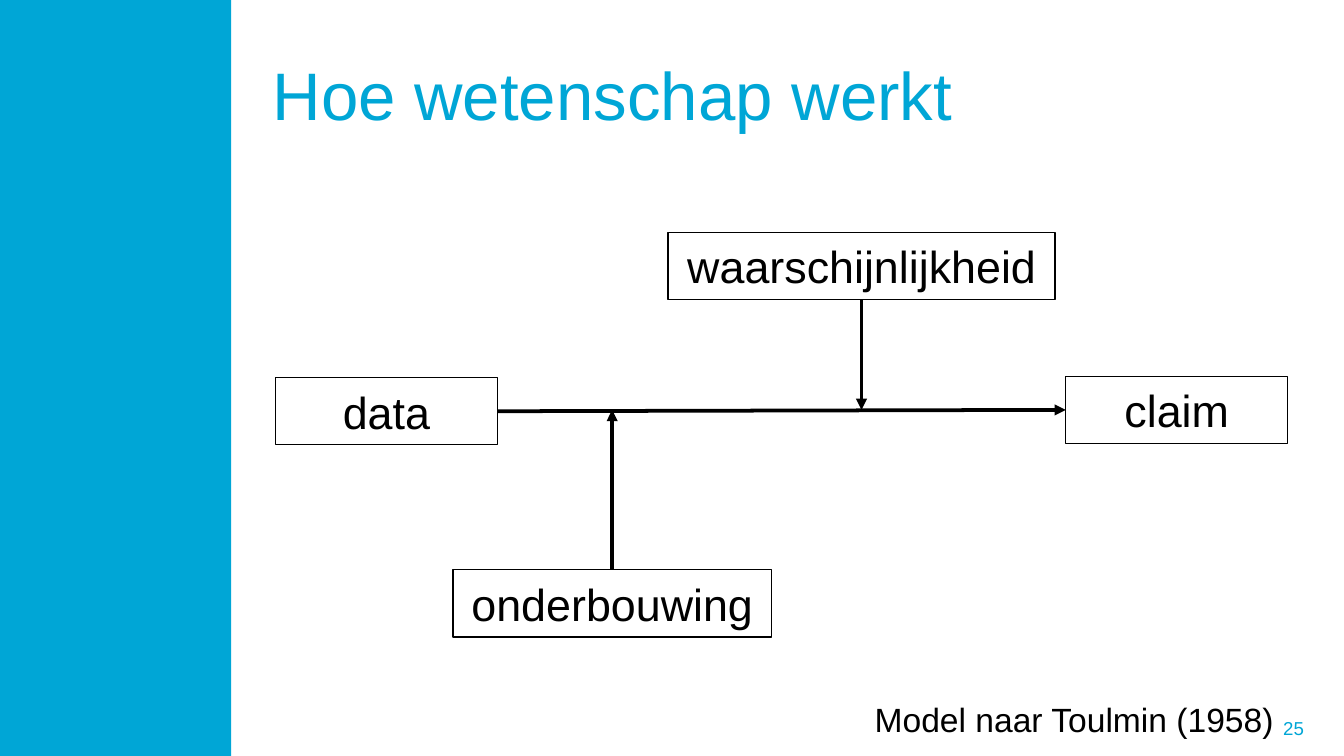
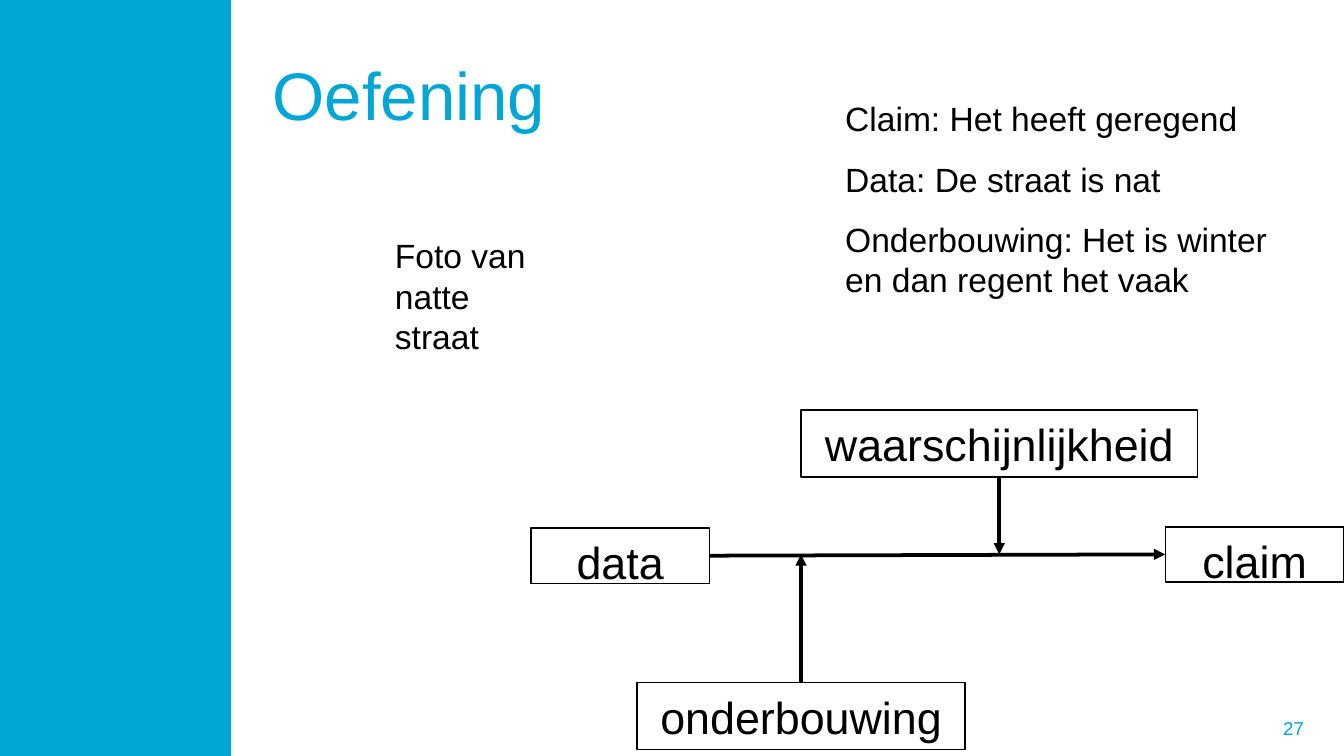
from dataclasses import dataclass

from lxml import etree
from pptx import Presentation
from pptx.dml.color import RGBColor
from pptx.enum.shapes import MSO_CONNECTOR, MSO_SHAPE
from pptx.enum.text import MSO_ANCHOR, PP_ALIGN
from pptx.oxml.ns import qn
from pptx.util import Inches, Pt

RECTANGLE = MSO_SHAPE.RECTANGLE
STRAIGHT = MSO_CONNECTOR.STRAIGHT
TOP, MIDDLE = MSO_ANCHOR.TOP, MSO_ANCHOR.MIDDLE
LEFT, CENTER, RIGHT = PP_ALIGN.LEFT, PP_ALIGN.CENTER, PP_ALIGN.RIGHT

# The slide is a grid of square cells: 100 columns by 56.25 rows
COLUMNS, ROWS = 100, 56.25
CELL = Inches(10) / COLUMNS


@dataclass(frozen=True)
class Theme:
    font: str = "Arial"
    accent: RGBColor = RGBColor(0x00, 0xA6, 0xD6)
    ink: RGBColor = RGBColor(0x00, 0x00, 0x00)
    title: int = 36
    label: int = 24
    body: int = 18
    number: int = 10
    outline: float = 0.75
    arrow: float = 2


THEME = Theme()


def cells(*counts):
    return [round(count * CELL) for count in counts]


# Text
def write(shape, text, size, color=THEME.ink, align=LEFT, anchor=TOP):
    frame = shape.text_frame
    frame.word_wrap = True
    frame.vertical_anchor = anchor
    para = frame.paragraphs[0]
    para.alignment = align
    span = para.add_run()
    span.text = text
    formats = {"name": THEME.font, "size": Pt(size)}
    for name, value in formats.items():
        setattr(span.font, name, value)
    span.font.color.rgb = color


def add_text(page, area, text, size=THEME.body, **formats):
    write(page.shapes.add_textbox(*cells(*area)), text, size, **formats)


# Shapes and arrows
def add_rectangle(page, area):
    box = page.shapes.add_shape(RECTANGLE, *cells(*area))
    box.shadow.inherit = False
    return box


def add_label(page, area, text):
    box = add_rectangle(page, area)
    box.fill.background()
    box.line.color.rgb = THEME.ink
    box.line.width = Pt(THEME.outline)
    write(box, text, THEME.label, align=CENTER)


def add_arrow(page, start, end):
    arrow = page.shapes.add_connector(STRAIGHT, *cells(*start, *end))
    arrow.line.color.rgb = THEME.ink
    arrow.line.width = Pt(THEME.arrow)
    outline = arrow.line._get_or_add_ln()
    etree.SubElement(outline, qn("a:tailEnd"), type="triangle")
    etree.SubElement(arrow._element.spPr, qn("a:effectLst"))


# Parts that every page shares
def add_page(deck, title, number):
    page = deck.slides.add_slide(deck.slide_layouts[6])
    band = add_rectangle(page, (0, 0, 17.2, ROWS))
    band.fill.solid()
    band.fill.fore_color.rgb = THEME.accent
    band.line.fill.background()
    add_text(page, (19.3, 2.3, 77.7, 9.4), title, THEME.title,
             color=THEME.accent, anchor=MIDDLE)
    add_text(page, (72.7, 52.7, 25.3, 3), str(number), THEME.number,
             color=THEME.accent, align=RIGHT, anchor=MIDDLE)
    return page


# Argument model: data leads to claim, backed from below, qualified from above
def add_model(page, data, claim, backing, probability):
    labels = {"claim": claim, "data": data, "onderbouwing": backing,
              "waarschijnlijkheid": probability}
    for text, area in labels.items():
        add_label(page, area, text)

    def center(area):
        left, top, width, height = area
        return left + width / 2, top + height / 2

    axis = center(claim)[1]
    backing_x, probability_x = center(backing)[0], center(probability)[0]
    add_arrow(page, (data[0] + data[2], center(data)[1]), (claim[0], axis))
    add_arrow(page, (backing_x, backing[1]), (backing_x, axis))
    add_arrow(page, (probability_x, probability[1] + probability[3]),
              (probability_x, axis))


def add_science_page(deck):
    page = add_page(deck, "Hoe wetenschap werkt", 25)
    add_model(page, data=(20.5, 28.1, 16.5, 5), claim=(79.3, 28, 16.5, 5),
              backing=(33.7, 42.4, 23.7, 5),
              probability=(49.7, 17.3, 28.8, 5))
    add_text(page, (64.1, 51.5, 32, 4), "Model naar Toulmin (1958)")


def add_exercise_page(deck):
    page = add_page(deck, "Oefening", 27)
    add_model(page, data=(39.5, 39.3, 13.3, 4.1),
              claim=(86.7, 39.2, 13.3, 4.1),
              backing=(47.4, 50.8, 24.4, 5),
              probability=(59.6, 30.5, 29.5, 5))
    statements = ["Claim: Het heeft geregend", "Data: De straat is nat",
                  "Onderbouwing: Het is winter en dan regent het vaak"]
    for row, (text, height) in enumerate(zip(statements, (4, 4, 7.1))):
        add_text(page, (61.9, 6.8 + 4.5 * row, 35.1, height), text)
    add_text(page, (28.4, 17, 12.1, 10.1), "Foto van natte straat")


def main():
    deck = Presentation()
    deck.slide_width, deck.slide_height = cells(COLUMNS, ROWS)
    add_science_page(deck)
    add_exercise_page(deck)
    deck.save("out.pptx")


if __name__ == "__main__":
    main()
